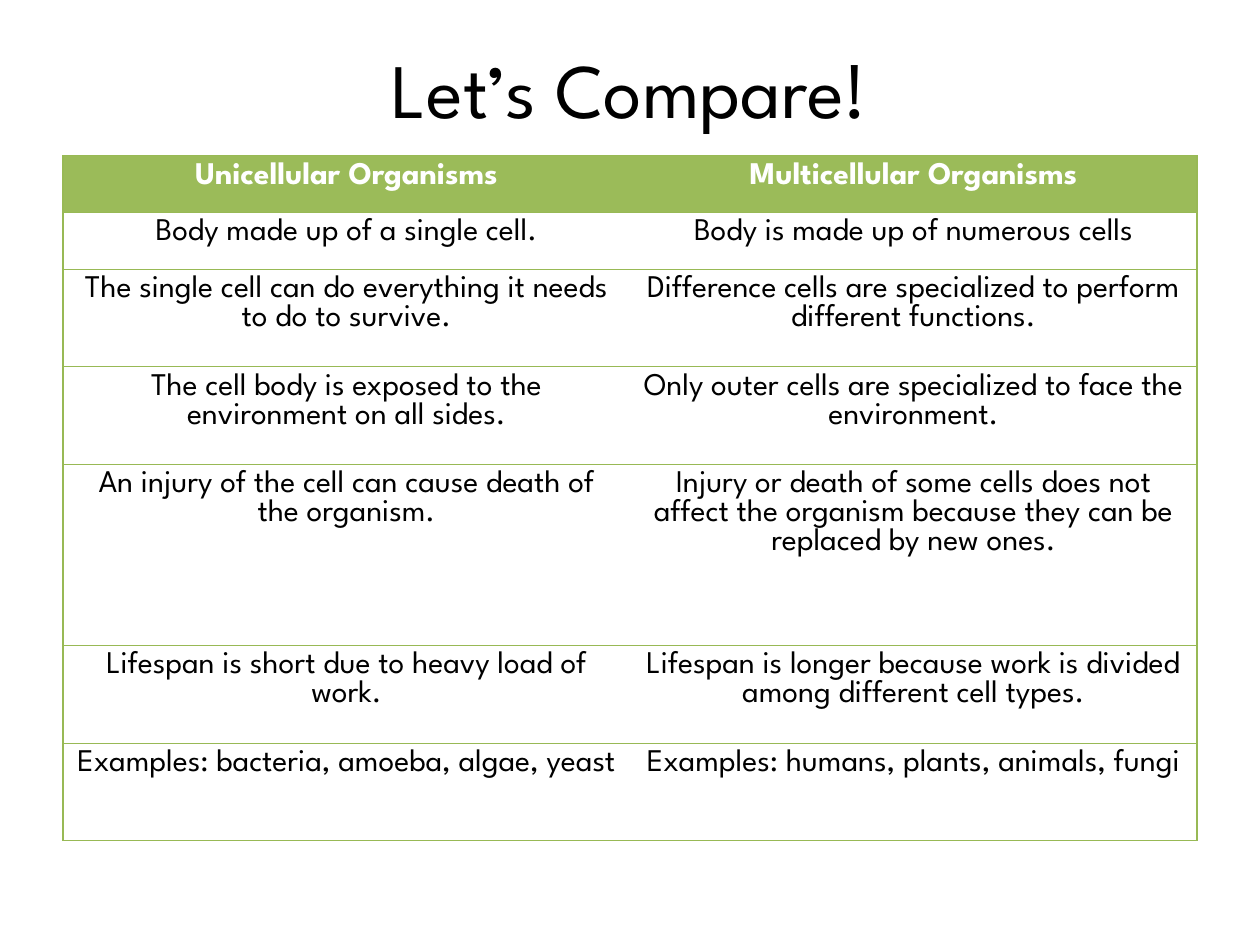
from lxml.etree import SubElement
from pptx import Presentation
from pptx.dml.color import RGBColor
from pptx.enum.text import MSO_ANCHOR as Anchor, PP_ALIGN as Align
from pptx.oxml.ns import qn
from pptx.util import Pt

BLACK = RGBColor(0x00, 0x00, 0x00)
WHITE = RGBColor(0xFF, 0xFF, 0xFF)
HEADER_GREEN = RGBColor(0x9B, 0xBB, 0x59)
BORDER_GREEN = RGBColor(0x98, 0xB9, 0x55)
FONT = "League Spartan"

COLUMN_WIDTH = 324
ROW_HEIGHTS = [32.4, 32.4, 55.8, 55.8, 103.5, 55.8, 55.8]
COMPARISON = [
    ("Unicellular Organisms", "Multicellular Organisms"),
    ("Body made up of a single cell.", "Body is made up of numerous cells"),
    ("The single cell can do everything it needs to do to survive.",
     "Difference cells are specialized to perform different functions."),
    ("The cell body is exposed to the environment on all sides.",
     "Only outer cells are specialized to face the environment."),
    ("An injury of the cell can cause death of the organism.",
     "Injury or death of some cells does not affect the organism "
     "because they can be replaced by new ones."),
    ("Lifespan is short due to heavy load of work.",
     "Lifespan is longer because work is divided among different cell types."),
    ("Examples: bacteria, amoeba, algae, yeast",
     "Examples: humans, plants, animals, fungi"),
]


def write_text(frame, text, size=18, color=BLACK, bold=False):
    para = frame.paragraphs[0]
    para.alignment = Align.CENTER
    span = para.add_run()
    span.text = text
    span.font.name = FONT
    span.font.size = Pt(size)
    span.font.bold = bold
    span.font.color.rgb = color


def set_borders(cell, visible_sides):
    properties = cell._tc.get_or_add_tcPr()
    for side in "LRTB":
        line = SubElement(properties, qn(f"a:ln{side}"), w=str(Pt(0.75)))
        if side in visible_sides:
            fill = SubElement(line, qn("a:solidFill"))
            SubElement(fill, qn("a:srgbClr"), val=str(BORDER_GREEN))
        else:
            SubElement(line, qn("a:noFill"))


def add_title(page, text):
    title = page.shapes.title
    title.left, title.top = Pt(36), Pt(5)
    title.width, title.height = Pt(648), Pt(90)
    title.text_frame.vertical_anchor = Anchor.MIDDLE
    write_text(title.text_frame, text, size=44)


def add_comparison(page):
    frame = page.shapes.add_table(
        len(COMPARISON), 2, Pt(36), Pt(89),
        Pt(2 * COLUMN_WIDTH), Pt(sum(ROW_HEIGHTS)))
    table = frame.table
    table.horz_banding = False
    for column in table.columns:
        column.width = Pt(COLUMN_WIDTH)
    for row, height, texts in zip(table.rows, ROW_HEIGHTS, COMPARISON):
        row.height = Pt(height)
        is_header = texts == COMPARISON[0]
        for cell, text, outer_side in zip(row.cells, texts, "LR"):
            set_borders(cell, outer_side + "TB")
            if is_header:
                cell.fill.solid()
                cell.fill.fore_color.rgb = HEADER_GREEN
            else:
                cell.fill.background()
            write_text(cell.text_frame, text, bold=is_header,
                       color=WHITE if is_header else BLACK)


def main():
    deck = Presentation()
    deck.slide_width, deck.slide_height = Pt(720), Pt(540)
    page = deck.slides.add_slide(deck.slide_layouts[5])
    add_title(page, "Let’s Compare!")
    add_comparison(page)
    deck.save("out.pptx")


if __name__ == "__main__":
    main()
